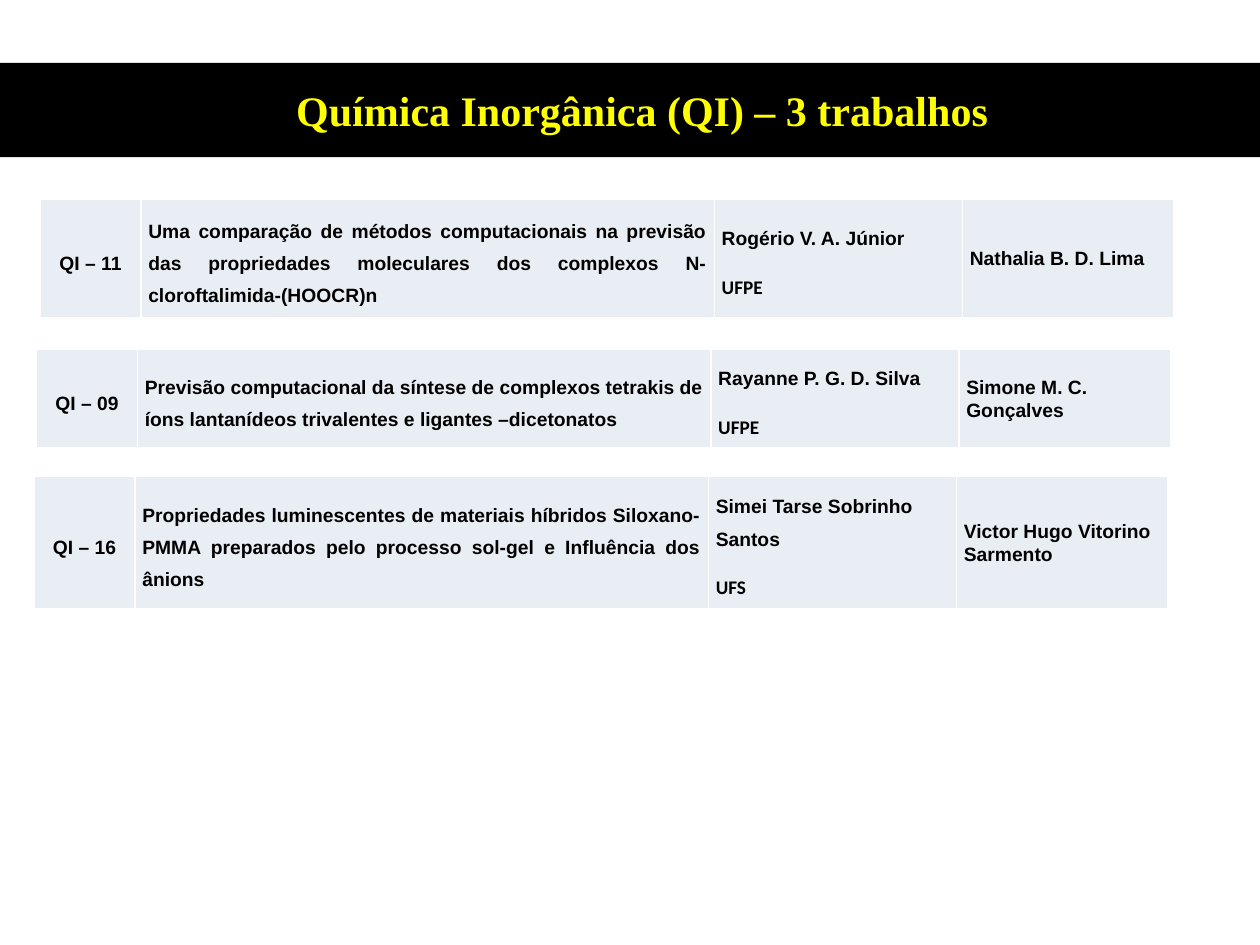
from lxml import etree
from pptx import Presentation
from pptx.dml.color import RGBColor
from pptx.enum.shapes import MSO_SHAPE
from pptx.enum.text import MSO_ANCHOR, MSO_AUTO_SIZE, PP_ALIGN
from pptx.oxml.ns import qn
from pptx.util import Cm, Pt

RECTANGLE = MSO_SHAPE.RECTANGLE
MIDDLE = MSO_ANCHOR.MIDDLE
GROW = MSO_AUTO_SIZE.SHAPE_TO_FIT_TEXT
LEFT, CENTER, JUSTIFY = PP_ALIGN.LEFT, PP_ALIGN.CENTER, PP_ALIGN.JUSTIFY

COLORS = {
    "band": "000000",
    "title": "FFFF00",
    "text": "000000",
    "cell": "E9EDF4",
    "border": "FFFFFF",
}
COLUMN_WIDTHS = (2.03, 11.56, 5, 4.27)
CELL_INSET = 0.15
WORKS = [
    ((0.81, 4.01, 22.86, 2.26), "QI – 11",
     "Uma comparação de métodos computacionais na previsão das propriedades "
     "moleculares dos complexos N-cloroftalimida-(HOOCR)n",
     "Rogério V. A. Júnior", "UFPE", "Nathalia B. D. Lima"),
    ((0.74, 7.04, 22.86, 1.98), "QI – 09",
     "Previsão computacional da síntese de complexos tetrakis de íons "
     "lantanídeos trivalentes e ligantes –dicetonatos",
     "Rayanne P. G. D. Silva", "UFPE", "Simone M. C. Gonçalves"),
    ((0.69, 9.6, 22.86, 1.98), "QI – 16",
     "Propriedades luminescentes de materiais híbridos Siloxano-PMMA "
     "preparados pelo processo sol-gel e Influência dos ânions",
     "Simei Tarse Sobrinho Santos", "UFS", "Victor Hugo Vitorino Sarmento"),
]


def rgb(name):
    return RGBColor.from_string(COLORS[name])


def write(paragraph, text, font="Arial", size=11, color="text",
          align=LEFT, spacing=1.5, after=8):
    paragraph.alignment = align
    paragraph.line_spacing = spacing
    paragraph.space_after = Pt(after)
    run = paragraph.add_run()
    run.text = text
    run.font.name = font
    run.font.size = Pt(size)
    run.font.bold = True
    run.font.color.rgb = rgb(color)


def add_title(slide, box, text):
    left, top, width, height = box
    band = slide.shapes.add_shape(RECTANGLE, *map(Cm, box))
    band.shadow.inherit = False
    band.fill.solid()
    band.fill.fore_color.rgb = rgb("band")
    band.line.fill.background()

    title = slide.shapes.add_textbox(
        Cm(left + 0.69), Cm(top + 0.3), Cm(width - 0.89), Cm(height - 0.63))
    title.text_frame.word_wrap = True
    title.text_frame.auto_size = GROW
    write(title.text_frame.paragraphs[0], text, font="Times New Roman",
          size=24, color="title", align=CENTER, spacing=1, after=0)


def style_cell(cell, vertical_inset):
    cell.vertical_anchor = MIDDLE
    cell.margin_left = cell.margin_right = Cm(CELL_INSET)
    cell.margin_top = cell.margin_bottom = Cm(vertical_inset)
    properties = cell._tc.get_or_add_tcPr()
    for side in ("lnL", "lnR", "lnT", "lnB"):
        border = etree.SubElement(properties, qn(f"a:{side}"), w=str(Pt(1)))
        fill = etree.SubElement(border, qn("a:solidFill"))
        etree.SubElement(fill, qn("a:srgbClr"), val=COLORS["border"])
    cell.fill.solid()
    cell.fill.fore_color.rgb = rgb("cell")


def add_work(slide, box, code, subject, author, university, advisor):
    table = slide.shapes.add_table(1, len(COLUMN_WIDTHS), *map(Cm, box)).table
    table.first_row = False
    table.horz_banding = False
    for column, width in zip(table.columns, COLUMN_WIDTHS):
        column.width = Cm(width)

    code_cell, subject_cell, author_cell, advisor_cell = table.rows[0].cells
    for cell in (code_cell, subject_cell, author_cell):
        style_cell(cell, CELL_INSET)
    style_cell(advisor_cell, 0)

    write(code_cell.text_frame.paragraphs[0], code, align=CENTER)
    write(subject_cell.text_frame.paragraphs[0], subject, align=JUSTIFY)
    write(author_cell.text_frame.paragraphs[0], author)
    write(author_cell.text_frame.add_paragraph(), university, font="Calibri")
    write(advisor_cell.text_frame.paragraphs[0], advisor,
          spacing=1.07, after=5)


def main():
    deck = Presentation()
    deck.slide_width, deck.slide_height = Cm(25.4), Cm(19.05)
    slide = deck.slides.add_slide(deck.slide_layouts[6])
    add_title(slide, (0, 1.27, 25.4, 1.9),
              "Química Inorgânica (QI) – 3 trabalhos")
    for work in WORKS:
        add_work(slide, *work)
    deck.save("out.pptx")


if __name__ == "__main__":
    main()
